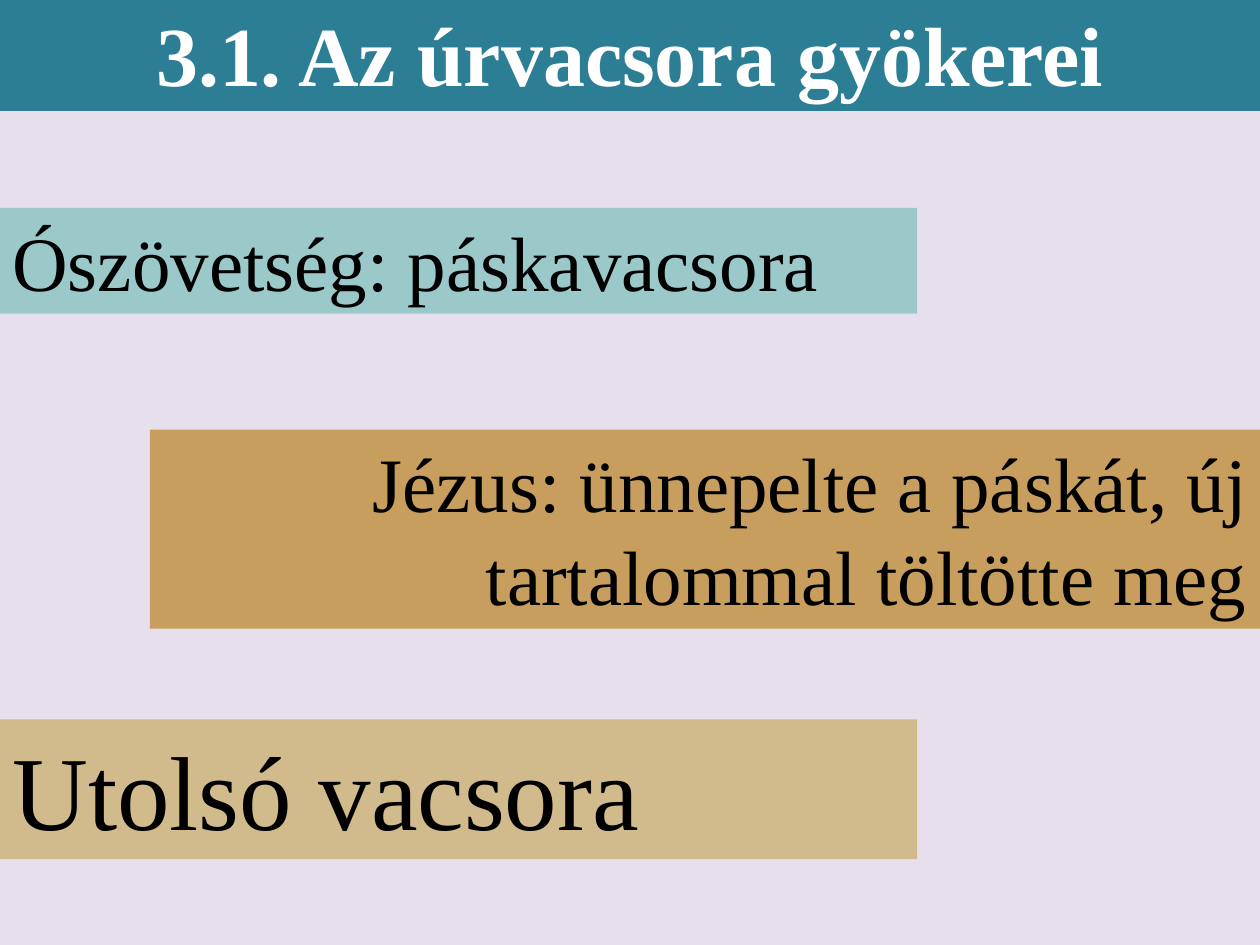
from pptx import Presentation
from pptx.dml.color import RGBColor
from pptx.enum.shapes import MSO_SHAPE
from pptx.enum.text import MSO_ANCHOR, MSO_AUTO_SIZE, PP_ALIGN
from pptx.util import Inches, Pt

COLORS = {
    "background": "E6E0EC",
    "title": "2C7E94",
    "old_testament": "9BC9C9",
    "jesus": "C79E5E",
    "last_supper": "D1BB8C",
    "light_text": "FFFFFF",
    "dark_text": "000000",
}
FONT = "Times New Roman"
BANDS = [
    ("Ószövetség: páskavacsora", (0, 1.65, 7.28, 0.84), "old_testament", 44, PP_ALIGN.LEFT),
    ("Jézus: ünnepelte a páskát, új tartalommal töltötte meg",
     (1.19, 3.41, 8.81, 1.58), "jesus", 44, PP_ALIGN.RIGHT),
    ("Utolsó vacsora", (0, 5.71, 7.28, 1.11), "last_supper", 60, PP_ALIGN.LEFT),
]


def paint(target, color):
    """Give a shape or background a solid colour from the palette."""
    target.fill.solid()
    target.fill.fore_color.rgb = RGBColor.from_string(COLORS[color])


def write_text(shape, text, size, align, color, bold=False):
    """Fill a shape with one formatted paragraph."""
    frame = shape.text_frame
    frame.text = text
    frame_format = {
        "word_wrap": True,
        "auto_size": MSO_AUTO_SIZE.SHAPE_TO_FIT_TEXT,
        "vertical_anchor": MSO_ANCHOR.TOP,
    }
    for name, value in frame_format.items():
        setattr(frame, name, value)
    para = frame.paragraphs[0]
    para.alignment = align
    font = para.runs[0].font
    for name, value in {"name": FONT, "size": Pt(size), "bold": bold}.items():
        setattr(font, name, value)
    font.color.rgb = RGBColor.from_string(COLORS[color])


def add_title(page, box, text):
    """Turn the title placeholder into a coloured banner in the box."""
    title = page.shapes.title
    for name, value in zip(("left", "top", "width", "height"), box):
        setattr(title, name, Inches(value))
    paint(title, "title")
    write_text(title, text, 48, PP_ALIGN.CENTER, "light_text", bold=True)


def add_band(page, box, text, color, size, align):
    """Add one coloured text band in the box."""
    band = page.shapes.add_shape(MSO_SHAPE.RECTANGLE, *map(Inches, box))
    band.shadow.inherit = False
    band.line.fill.background()
    paint(band, color)
    write_text(band, text, size, align, "dark_text")


def main():
    """Build and save the slide."""
    deck = Presentation()
    deck.slide_width, deck.slide_height = Inches(10), Inches(7.5)
    page = deck.slides.add_slide(deck.slide_layouts[5])
    paint(page.background, "background")
    add_title(page, (0, -0.03, 10, 0.91), "3.1. Az úrvacsora gyökerei")
    for text, box, color, size, align in BANDS:
        add_band(page, box, text, color, size, align)
    deck.save("out.pptx")


if __name__ == "__main__":
    main()
